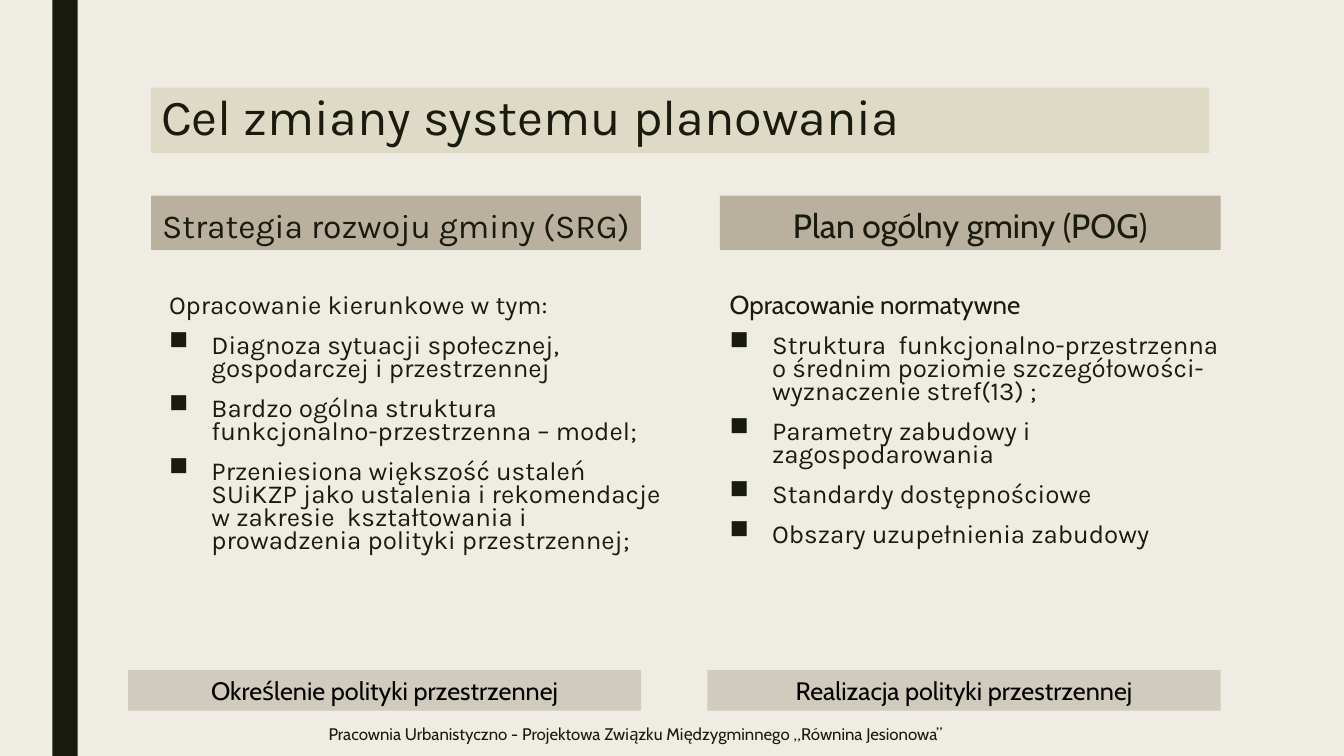
from pptx import Presentation
from pptx.dml.color import RGBColor
from pptx.enum.shapes import MSO_SHAPE
from pptx.enum.text import MSO_ANCHOR, PP_ALIGN
from pptx.oxml.ns import qn
from pptx.util import Cm, Pt
from lxml import etree

RECTANGLE = MSO_SHAPE.RECTANGLE
LEFT, CENTER = PP_ALIGN.LEFT, PP_ALIGN.CENTER
TOP, MIDDLE, BOTTOM = MSO_ANCHOR.TOP, MSO_ANCHOR.MIDDLE, MSO_ANCHOR.BOTTOM

WIDTH, HEIGHT = 33.87, 19.05
DARK, BLACK = "191B0E", "000000"
PAPER, SAND, TAUPE, STONE = "EFEDE3", "DEDAC5", "BAB09E", "D1CBBE"
KARLA, CABIN = "Karla", "Cabin"
BULLET_INDENT = 1.07
HEADING_TOP, HEADING_HEIGHT = 4.93, 1.37
BODY_TOP, BODY_WIDTH = 7.34, 12.93
SUMMARY_TOP, SUMMARY_HEIGHT = 16.89, 1.02

# Boxes are (left, top, width, height) in centimetres.
COLUMNS = [
    {
        "heading": ("Strategia rozwoju gminy (SRG)", KARLA),
        "heading_box": (3.81, HEADING_TOP, 12.34, HEADING_HEIGHT),
        "intro": ("Opracowanie kierunkowe w tym:", KARLA),
        "points": [
            "Diagnoza sytuacji społecznej, gospodarczej i przestrzennej",
            "Bardzo ogólna struktura funkcjonalno-przestrzenna – model;",
            "Przeniesiona większość ustaleń SUiKZP jako ustalenia i rekomendacje "
            "w zakresie  kształtowania i prowadzenia polityki przestrzennej;",
        ],
        "body_box": (4.01, BODY_TOP, BODY_WIDTH, 8.15),
        "summary": "Określenie polityki przestrzennej",
        "summary_box": (3.23, SUMMARY_TOP, BODY_WIDTH, SUMMARY_HEIGHT),
    },
    {
        "heading": ("Plan ogólny gminy (POG)", CABIN),
        "heading_box": (18.14, HEADING_TOP, 12.62, HEADING_HEIGHT),
        "intro": ("Opracowanie normatywne", CABIN),
        "points": [
            "Struktura  funkcjonalno-przestrzenna o średnim poziomie "
            "szczegółowości- wyznaczenie stref(13) ;",
            "Parametry zabudowy i zagospodarowania",
            "Standardy dostępnościowe",
            "Obszary uzupełnienia zabudowy",
        ],
        "body_box": (18.14, BODY_TOP, BODY_WIDTH, 7.11),
        "summary": "Realizacja polityki przestrzennej",
        "summary_box": (17.83, SUMMARY_TOP, BODY_WIDTH, SUMMARY_HEIGHT),
    },
]


def color(hex_string):
    return RGBColor.from_string(hex_string)


def add_panel(page, box, fill):
    panel = page.shapes.add_shape(RECTANGLE, *map(Cm, box))
    panel.shadow.inherit = False
    panel.fill.solid()
    panel.fill.fore_color.rgb = color(fill)
    panel.line.fill.background()
    return panel


def add_text_box(page, box):
    return page.shapes.add_textbox(*map(Cm, box))


def prepare_frame(shape, anchor):
    frame = shape.text_frame
    frame.word_wrap = True
    frame.vertical_anchor = anchor
    return frame


def write(para, text, font, size, ink=DARK, align=LEFT, spacing=1.0):
    para.alignment = align
    para.line_spacing = spacing
    span = para.add_run()
    span.text = text
    span.font.name = font
    span.font.size = Pt(size)
    span.font.color.rgb = color(ink)


def add_bullet(para):
    """Give the paragraph a square bullet with a hanging indent."""
    properties = para._p.get_or_add_pPr()
    properties.set("marL", str(Cm(BULLET_INDENT)))
    properties.set("indent", str(-Cm(BULLET_INDENT)))
    etree.SubElement(properties, qn("a:buChar")).set("char", "■")


def add_title(page, box):
    frame = prepare_frame(add_panel(page, box, SAND), TOP)
    write(frame.paragraphs[0], "Cel zmiany systemu planowania", KARLA, 36, spacing=0.89)


def add_heading(page, box, text, font):
    frame = prepare_frame(add_panel(page, box, TAUPE), BOTTOM)
    write(frame.paragraphs[0], text, font, 24, align=CENTER, spacing=0.84)


def add_body(page, box, intro, points):
    frame = prepare_frame(add_text_box(page, box), TOP)
    lines = [intro] + [(point, KARLA) for point in points]
    for number, (text, font) in enumerate(lines):
        para = frame.add_paragraph() if number else frame.paragraphs[0]
        write(para, text, font, 18.5, spacing=0.74)
        para.space_before, para.space_after = Pt(10), Pt(2)
        if number:
            add_bullet(para)


def add_summary(page, box, text):
    frame = prepare_frame(add_panel(page, box, STONE), TOP)
    write(frame.paragraphs[0], text, CABIN, 18, BLACK, CENTER)


def add_column(page, column):
    add_heading(page, column["heading_box"], *column["heading"])
    add_body(page, column["body_box"], column["intro"], column["points"])
    add_summary(page, column["summary_box"], column["summary"])


def add_footer(page, box):
    frame = prepare_frame(add_text_box(page, box), MIDDLE)
    write(
        frame.paragraphs[0],
        "Pracownia Urbanistyczno - Projektowa Związku Międzygminnego „Równina Jesionowa”",
        CABIN,
        12,
    )


def main():
    deck = Presentation()
    deck.slide_width, deck.slide_height = Cm(WIDTH), Cm(HEIGHT)
    page = deck.slides.add_slide(deck.slide_layouts[6])
    page.background.fill.solid()
    page.background.fill.fore_color.rgb = color(PAPER)

    add_panel(page, (1.32, 0, 0.64, HEIGHT), DARK)
    add_title(page, (3.81, 2.21, 26.67, 1.65))
    for column in COLUMNS:
        add_column(page, column)
    add_footer(page, (8.03, 17.93, 17.45, 1.12))
    deck.save("out.pptx")


if __name__ == "__main__":
    main()
